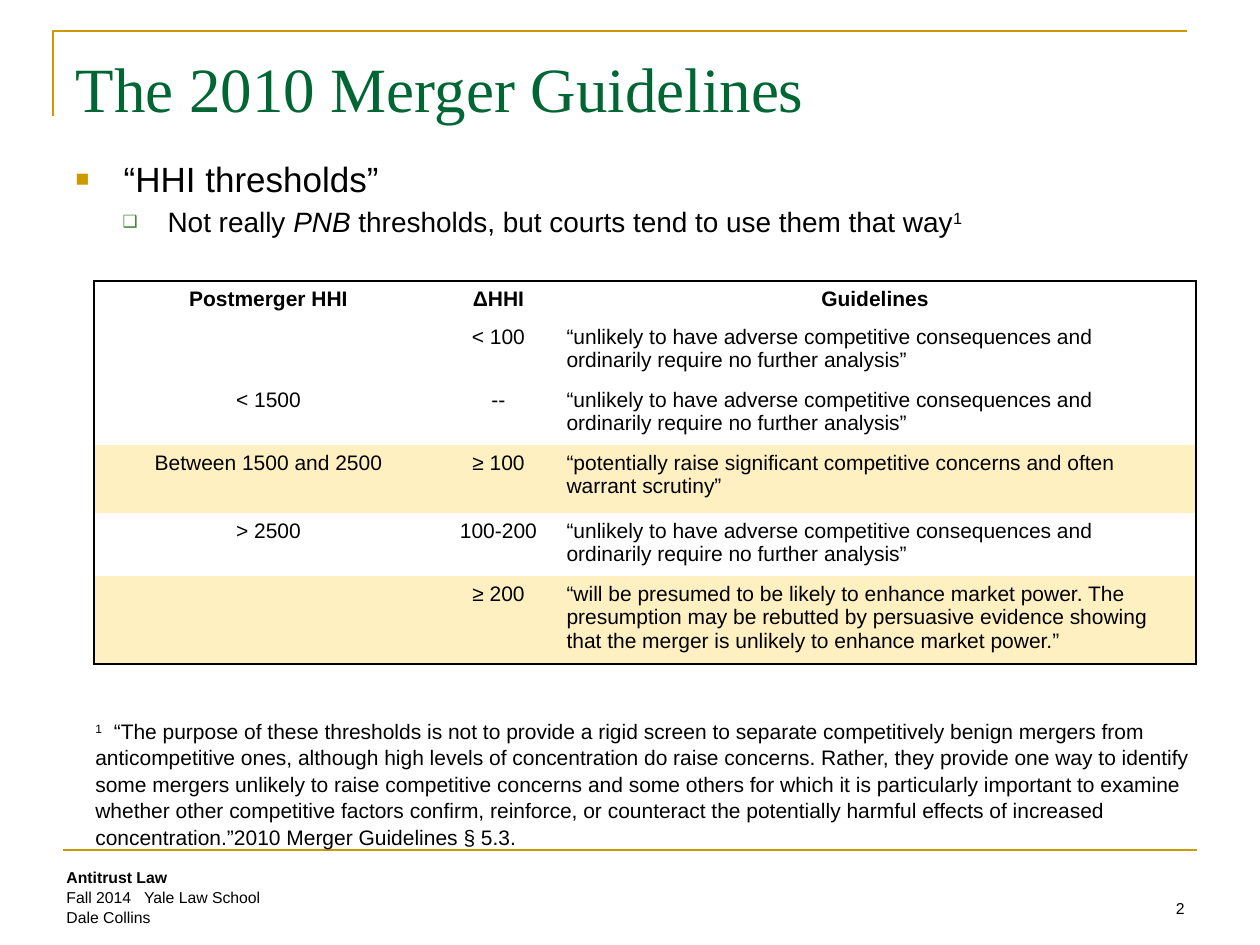
from lxml import etree
from pptx import Presentation
from pptx.dml.color import RGBColor
from pptx.enum.shapes import MSO_CONNECTOR
from pptx.enum.text import MSO_ANCHOR, PP_ALIGN
from pptx.oxml.ns import qn
from pptx.util import Emu, Pt

STRAIGHT = MSO_CONNECTOR.STRAIGHT
LEFT, CENTER, RIGHT = PP_ALIGN.LEFT, PP_ALIGN.CENTER, PP_ALIGN.RIGHT
MIDDLE, BOTTOM = MSO_ANCHOR.MIDDLE, MSO_ANCHOR.BOTTOM
COLORS = {"gold": "CC9900", "title": "006633", "sub_bullet": "3B812F",
          "text": "000000", "highlight": "FFF0C2"}
PLAIN_TABLE_STYLE = "{2D5ABB26-0587-4C30-8999-92F81FD0307C}"


def px(count):
    """Turn pixels, 126 to the inch, into EMU."""
    return Emu(round(count * 914400 / 126))


def write(para, text, size=12, font="Arial", color="text", bold=False,
          italic=False, superscript=False):
    span = para.add_run()
    span.text = text
    span.font.size = Pt(size)
    span.font.name = font
    span.font.bold = bold
    span.font.italic = italic
    span.font.color.rgb = RGBColor.from_string(COLORS[color])
    if superscript:
        span._r.get_or_add_rPr().set("baseline", "30000")


deck = Presentation()
deck.slide_width, deck.slide_height = px(1260), px(945)
page = deck.slides.add_slide(deck.slide_layouts[1])
shapes = page.shapes
gold = RGBColor.from_string(COLORS["gold"])

# Gold frame around the title and rule above the footer
builder = shapes.build_freeform(px(53), px(116), scale=1.0)
builder.add_line_segments([(px(53), px(31)), (px(1187), px(31))], close=False)
corner = builder.convert_to_shape()
corner.shadow.inherit = False
corner.fill.background()
rule = shapes.add_connector(STRAIGHT, px(63), px(850), px(1197), px(850))
etree.SubElement(rule._element.spPr, qn("a:effectLst"))
for outline in (corner.line, rule.line):
    outline.color.rgb = gold
    outline.width = Pt(1.5)

# Title
title = shapes.title
title.left, title.top, title.width, title.height = px(63), px(38), px(1197), px(98)
title.text_frame.vertical_anchor = MIDDLE
para = title.text_frame.paragraphs[0]
para.alignment = LEFT
write(para, "The 2010 Merger Guidelines", size=36, font="Times New Roman", color="title")

# Bulleted list
body = page.placeholders[1]
body.left, body.top, body.width, body.height = px(63), px(151), px(1134), px(683)
heading = body.text_frame.paragraphs[0]
write(heading, "“HHI thresholds”", size=20)
detail = body.text_frame.add_paragraph()
detail.level = 1
write(detail, "Not really ", size=16)
write(detail, "PNB", size=16, italic=True)
write(detail, " thresholds, but courts tend to use them that way", size=16)
write(detail, "1", size=16, superscript=True)

bullets = [(heading, "■", "gold", 65, 48, 48, 12),
           (detail, "❑", "sub_bullet", 60, 92, 45, 3.2)]
for para, mark, color, percent, margin, hang, space in bullets:
    para.space_before = Pt(space)
    props = para._p.get_or_add_pPr()
    props.set("marL", str(px(margin)))
    props.set("indent", str(-px(hang)))
    bullet_color = etree.SubElement(props, qn("a:buClr"))
    etree.SubElement(bullet_color, qn("a:srgbClr"), val=COLORS[color])
    etree.SubElement(props, qn("a:buSzPct"), val=str(percent * 1000))
    etree.SubElement(props, qn("a:buFont"), typeface="Arial")
    etree.SubElement(props, qn("a:buChar"), char=mark)

# Threshold table
UNLIKELY = ("“unlikely to have adverse competitive consequences and ordinarily "
            "require no further analysis”")
ROWS = [
    ("Postmerger HHI", "ΔHHI", "Guidelines"),
    ("", "< 100", UNLIKELY),
    ("< 1500", "--", UNLIKELY),
    ("Between 1500 and 2500", "≥ 100",
     "“potentially raise significant competitive concerns and often warrant scrutiny”"),
    ("> 2500", "100-200", UNLIKELY),
    ("", "≥ 200",
     "“will be presumed to be likely to enhance market power. The presumption may be "
     "rebutted by persuasive evidence showing that the merger is unlikely to enhance "
     "market power.”"),
]
HIGHLIGHTED_ROWS = (3, 5)
COLUMN_WIDTHS = [349, 111, 642]
ROW_HEIGHTS = [38, 63, 63, 68, 63, 88]
last_row, last_column = len(ROWS) - 1, len(COLUMN_WIDTHS) - 1

frame = shapes.add_table(len(ROWS), len(COLUMN_WIDTHS), px(94), px(281),
                         px(sum(COLUMN_WIDTHS)), px(sum(ROW_HEIGHTS)))
table = frame.table
table.first_row = table.horz_banding = False
table._tbl.tblPr.find(qn("a:tableStyleId")).text = PLAIN_TABLE_STYLE
for column, width in zip(table.columns, COLUMN_WIDTHS):
    column.width = px(width)
for row, height in zip(table.rows, ROW_HEIGHTS):
    row.height = px(height)

for r, texts in enumerate(ROWS):
    for c, text in enumerate(texts):
        cell = table.cell(r, c)
        para = cell.text_frame.paragraphs[0]
        para.alignment = LEFT if r > 0 and c == last_column else CENTER
        if text:
            write(para, text, bold=r == 0)
        props = cell._tc.get_or_add_tcPr()
        outer_edges = {"a:lnL": c == 0, "a:lnR": c == last_column,
                       "a:lnT": r == 0, "a:lnB": r == last_row}
        for tag, is_outer in outer_edges.items():
            if is_outer:
                edge = etree.SubElement(props, qn(tag), w=str(Pt(1)))
                paint = etree.SubElement(edge, qn("a:solidFill"))
                etree.SubElement(paint, qn("a:srgbClr"), val=COLORS["text"])
        if r in HIGHLIGHTED_ROWS:
            cell.fill.solid()
            cell.fill.fore_color.rgb = RGBColor.from_string(COLORS["highlight"])
        else:
            cell.fill.background()

# Footnote, footer and page number
text_boxes = []
for bounds in [(83, 711, 1133, 140), (54, 861, 588, 70), (903, 861, 294, 63)]:
    box = shapes.add_textbox(*map(px, bounds))
    box.text_frame.word_wrap = True
    box.text_frame.paragraphs[0].line_spacing = 1.05
    text_boxes.append(box)
footnote, footer, number = (box.text_frame.paragraphs[0] for box in text_boxes)

write(footnote, "1", superscript=True)
write(footnote,
      "  “The purpose of these thresholds is not to provide a rigid screen to separate "
      "competitively benign mergers from anticompetitive ones, although high levels of "
      "concentration do raise concerns. Rather, they provide one way to identify some "
      "mergers unlikely to raise competitive concerns and some others for which it is "
      "particularly important to examine whether other competitive factors confirm, "
      "reinforce, or counteract the potentially harmful effects of increased "
      "concentration.”2010 Merger Guidelines § 5.3.")

write(footer, "Antitrust Law", size=9, bold=True)
for text in ("Fall 2014   Yale Law School", "Dale Collins"):
    footer.add_line_break()
    write(footer, text, size=9)

text_boxes[-1].text_frame.vertical_anchor = BOTTOM
number.alignment = RIGHT
write(number, "2", size=9)

deck.save("out.pptx")
